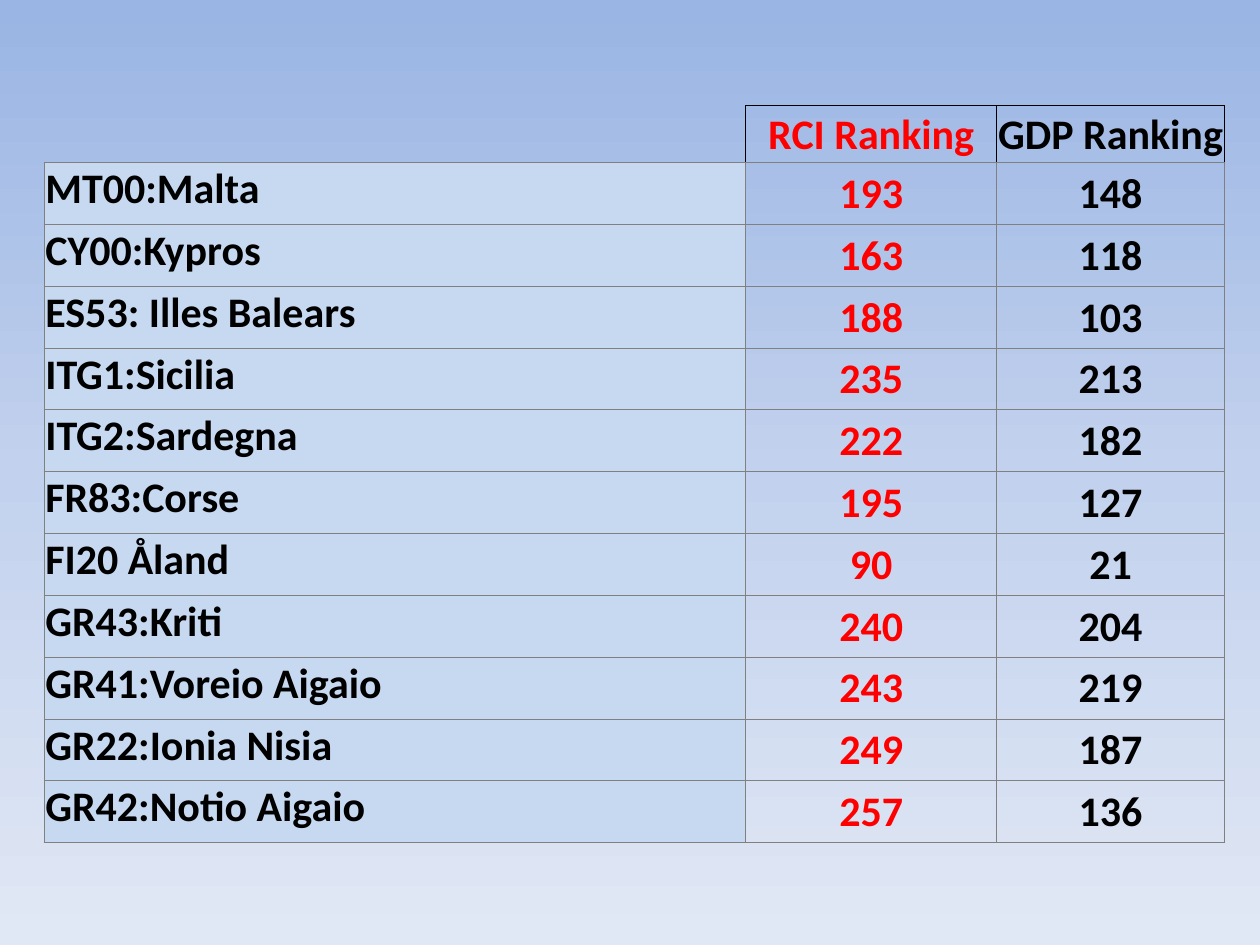
from dataclasses import dataclass

from lxml.etree import SubElement
from pptx import Presentation
from pptx.dml.color import RGBColor
from pptx.enum.text import MSO_ANCHOR, PP_ALIGN
from pptx.oxml.ns import qn
from pptx.util import Inches, Pt


@dataclass(frozen=True)
class Theme:
    """Colours, font and sizes of the slide."""
    font: str = "Calibri"
    size: int = 24
    text: str = "000000"
    accent: str = "FF0000"
    label_fill: str = "C6D9F1"
    grid: str = "808080"
    frame: str = "000000"
    line: float = 0.5
    background: tuple = ((0, "9AB5E4"), (50, "C2D1ED"), (100, "E1E8F5"))


THEME = Theme()
PLAIN_STYLE = "{2D5ABB26-0587-4C30-8999-92F81FD0307C}"
COLUMNS = (5.57, 1.99, 1.81)
HEADER_HEIGHT, ROW_HEIGHT = 0.45, 0.49
ROWS = (
    ("", "RCI Ranking", "GDP Ranking"),
    ("MT00:Malta", 193, 148),
    ("CY00:Kypros", 163, 118),
    ("ES53: Illes Balears", 188, 103),
    ("ITG1:Sicilia", 235, 213),
    ("ITG2:Sardegna", 222, 182),
    ("FR83:Corse", 195, 127),
    ("FI20 Åland", 90, 21),
    ("GR43:Kriti", 240, 204),
    ("GR41:Voreio Aigaio", 243, 219),
    ("GR22:Ionia Nisia", 249, 187),
    ("GR42:Notio Aigaio", 257, 136),
)


def paint_background(s):
    """Fill the slide with a top-to-bottom gradient."""
    fill = s.background.fill
    fill.gradient()
    fill.gradient_angle = 270
    stops = next(s.element.iter(qn("a:gsLst")))
    for stop in list(stops):
        stops.remove(stop)
    for percent, color in THEME.background:
        stop = SubElement(stops, qn("a:gs"), pos=str(percent * 1000))
        SubElement(stop, qn("a:srgbClr"), val=color)


def set_borders(cell, sides):
    """Draw the sides of a cell, given as a dict of side to colour or None."""
    tc_pr = cell._tc.get_or_add_tcPr()
    for index, side in enumerate("LRTB"):
        ln = SubElement(tc_pr, qn(f"a:ln{side}"), w=str(Pt(THEME.line)))
        tc_pr.insert(index, ln)
        if sides[side]:
            fill = SubElement(ln, qn("a:solidFill"))
            SubElement(fill, qn("a:srgbClr"), val=sides[side])
        else:
            SubElement(ln, qn("a:noFill"))


def border_colors(row, col):
    """Return the border colours for a position in the table."""
    if row:
        return dict.fromkeys("LRTB", THEME.grid)
    outer = THEME.frame if col else None
    return {"L": outer, "R": THEME.frame, "T": outer, "B": THEME.grid}


def fill_cell(cell, value, row, col):
    """Write and format one cell."""
    margin = Inches(0.01)
    formats = {"margin_left": margin, "margin_right": margin, "margin_top": margin,
               "margin_bottom": 0,
               "vertical_anchor": MSO_ANCHOR.MIDDLE if col else MSO_ANCHOR.TOP}
    for name, setting in formats.items():
        setattr(cell, name, setting)
    if row and not col:
        cell.fill.solid()
        cell.fill.fore_color.rgb = RGBColor.from_string(THEME.label_fill)
    else:
        cell.fill.background()
    set_borders(cell, border_colors(row, col))
    if value == "":
        return
    p = cell.text_frame.paragraphs[0]
    p.alignment = PP_ALIGN.CENTER if col else PP_ALIGN.LEFT
    r = p.add_run()
    r.text = str(value)
    for name, setting in {"name": THEME.font, "size": Pt(THEME.size), "bold": True}.items():
        setattr(r.font, name, setting)
    r.font.color.rgb = RGBColor.from_string(THEME.accent if col == 1 else THEME.text)


def add_ranking_table(s, left, top, width, height):
    """Place the regional ranking table in the given box."""
    frame = s.shapes.add_table(len(ROWS), len(COLUMNS), left, top, width, height)
    table = frame.table
    table.first_row = table.horz_banding = False
    next(table._tbl.iter(qn("a:tableStyleId"))).text = PLAIN_STYLE
    for column, share in zip(table.columns, COLUMNS):
        column.width = int(width * share / sum(COLUMNS))
    total = HEADER_HEIGHT + ROW_HEIGHT * (len(ROWS) - 1)
    for row, values in enumerate(ROWS):
        share = ROW_HEIGHT if row else HEADER_HEIGHT
        table.rows[row].height = int(height * share / total)
        for col, value in enumerate(values):
            fill_cell(table.cell(row, col), value, row, col)


def main():
    """Build and save the presentation."""
    prs = Presentation()
    prs.slide_width, prs.slide_height = Inches(10), Inches(7.5)
    s = prs.slides.add_slide(prs.slide_layouts[6])
    paint_background(s)
    add_ranking_table(s, Inches(0.35), Inches(0.84), Inches(9.37), Inches(5.85))
    prs.save("out.pptx")


if __name__ == "__main__":
    main()
